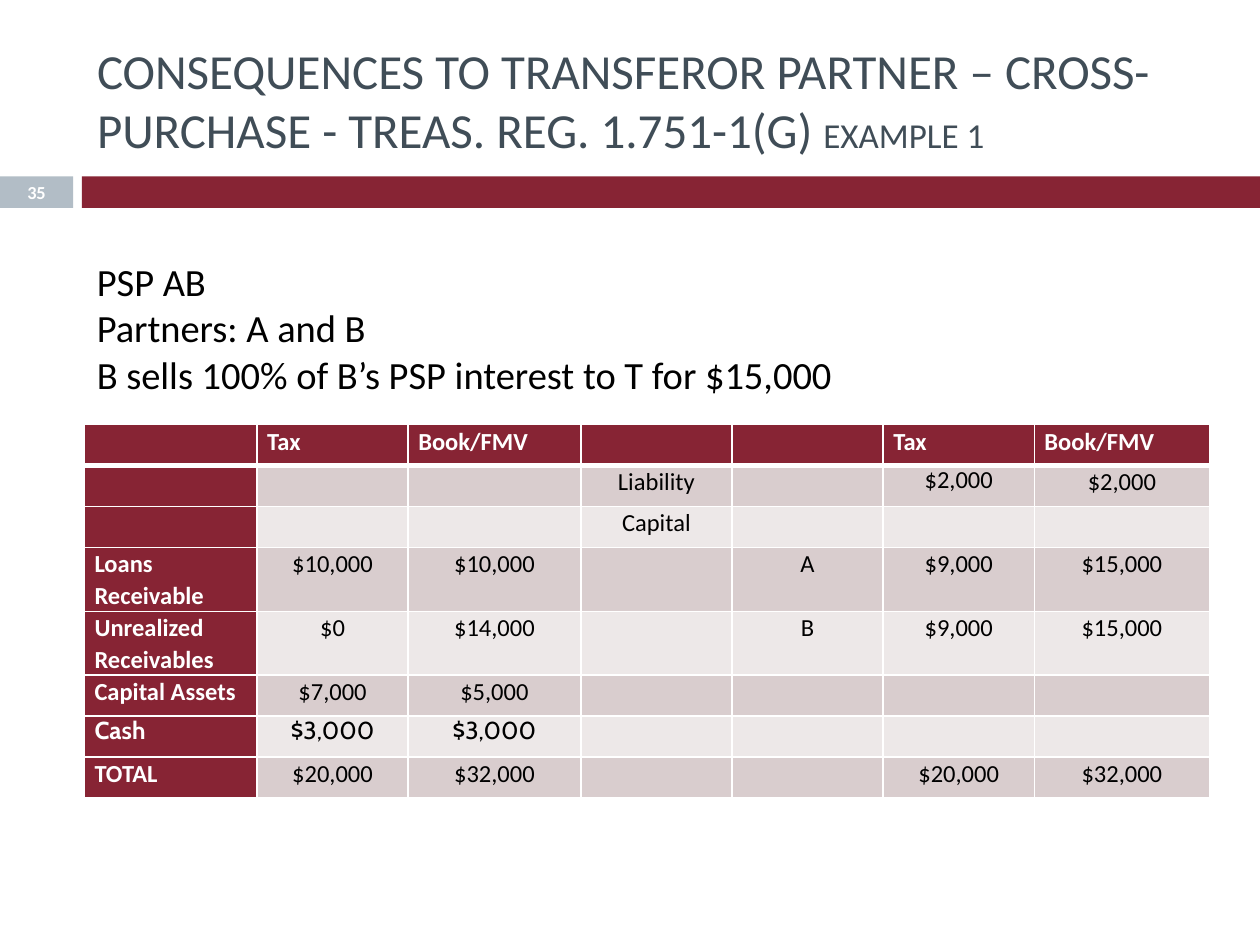
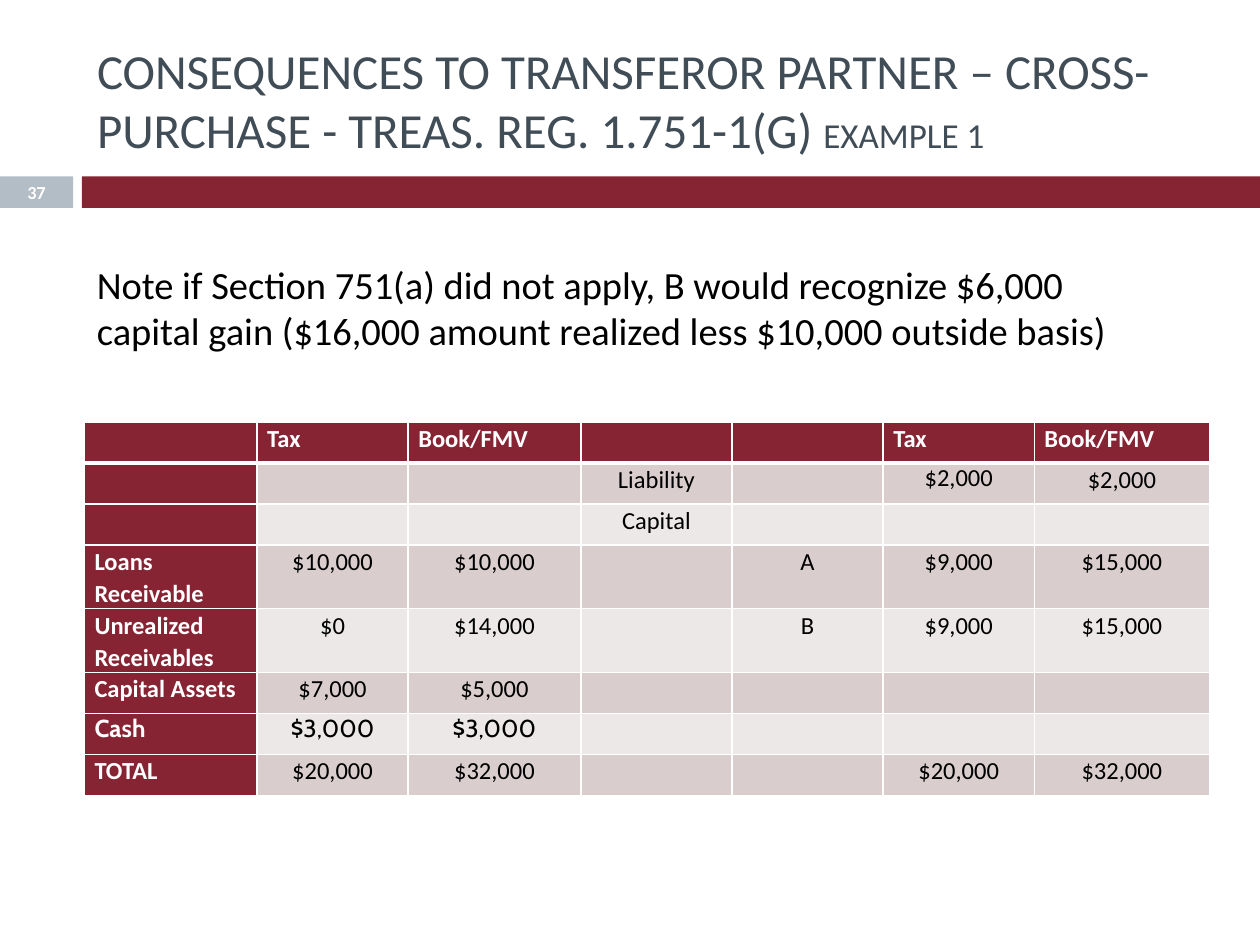
from lxml import etree
from pptx import Presentation
from pptx import util as u
from pptx.dml.color import RGBColor
from pptx.enum import shapes, text
from pptx.oxml.ns import qn

MAROON = RGBColor(0x87, 0x24, 0x34)
GREY = RGBColor(0xB2, 0xBD, 0xC6)
SLATE = RGBColor(0x40, 0x4D, 0x57)
ROSE = RGBColor(0xD9, 0xCD, 0xCE)
PALE = RGBColor(0xED, 0xE8, 0xE8)
WHITE = RGBColor(0xFF, 0xFF, 0xFF)
BLACK = RGBColor(0, 0, 0)

deck = Presentation()
deck.slide_width, deck.slide_height = u.Inches(10), u.Inches(7.5)
INCH = u.Inches(1)
MARGIN = 0.67
CONTENT_WIDTH = 8.92
BAND_TOP, BAND_HEIGHT = 1.4, 0.25
NUMBER_WIDTH, BAND_LEFT = 0.58, 0.65
ROW_HEIGHT = int(2.6 * INCH / 8)
COLUMN_WIDTHS = [1.37, 1.2, 1.37, 1.2, 1.2, 1.2, 1.39]

TITLE_RUNS = [
    ("CONSEQUENCES TO TRANSFEROR PARTNER – CROSS-PURCHASE - TREAS. REG. 1.751-1(G) ", 28),
    ("EXAMPLE 1", 20),
]
BALANCE_SHEET = [
    ["", "Tax", "Book/FMV", "", "", "Tax", "Book/FMV"],
    ["", "", "", "Liability", "", "$2,000", "$2,000"],
    ["", "", "", "Capital", "", "", ""],
    ["Loans Receivable", "$10,000", "$10,000", "", "A", "$9,000", "$15,000"],
    ["Unrealized Receivables", "$0", "$14,000", "", "B", "$9,000", "$15,000"],
    ["Capital Assets", "$7,000", "$5,000", "", "", "", ""],
    ["Cash", "$3,000", "$3,000", "", "", "", ""],
    ["TOTAL", "$20,000", "$32,000", "", "", "$20,000", "$32,000"],
]
CASH_ROW = 6
SINGLE_SPACED = {(1, 5)} | {(CASH_ROW, column) for column in range(3)}

PAGES = [
    {"number": "35", "facts_top": 2.0, "facts_width": 8.33, "sheet_top": 3.37,
     "facts": ["PSP AB", "Partners: A and B",
               "B sells 100% of B’s PSP interest to T for $15,000"]},
    {"number": "37", "facts_top": 2.02, "facts_width": 8.25, "sheet_top": 3.35,
     "facts": ["Note if Section 751(a) did not apply, B would recognize $6,000 "
               "capital gain ($16,000 amount realized less $10,000 outside basis)"]},
]


def add_run(paragraph, words, size, color, bold=False, name="Calibri"):
    run = paragraph.add_run()
    run.text = words
    run.font.color.rgb = color
    for key, value in {"size": u.Pt(size), "bold": bold, "name": name}.items():
        setattr(run.font, key, value)


def add_border(cell, side, points):
    line = etree.SubElement(cell._tc.get_or_add_tcPr(), qn(f"a:{side}"), w=str(u.Pt(points)))
    fill = etree.SubElement(line, qn("a:solidFill"))
    etree.SubElement(fill, qn("a:srgbClr"), val=str(WHITE))


for page in PAGES:
    slide = deck.slides.add_slide(deck.slide_layouts[5])

    for left, width, color in [(0, NUMBER_WIDTH, GREY), (BAND_LEFT, 10 - BAND_LEFT, MAROON)]:
        band = slide.shapes.add_shape(
            shapes.MSO_SHAPE.RECTANGLE,
            *map(u.Inches, (left, BAND_TOP, width, BAND_HEIGHT)))
        band.fill.solid()
        band.fill.fore_color.rgb = color
        band.line.fill.background()
        band.shadow.inherit = False

    heading = slide.shapes.title
    for key, value in {"left": MARGIN, "top": 0.25, "width": CONTENT_WIDTH, "height": 1.08}.items():
        setattr(heading, key, u.Inches(value))
    for key, value in {"word_wrap": True, "auto_size": text.MSO_AUTO_SIZE.NONE,
                       "vertical_anchor": text.MSO_ANCHOR.MIDDLE}.items():
        setattr(heading.text_frame, key, value)
    heading_line = heading.text_frame.paragraphs[0]
    heading_line.alignment = text.PP_ALIGN.LEFT
    for words, size in TITLE_RUNS:
        add_run(heading_line, words, size, SLATE)

    sheet = slide.shapes.add_table(
        len(BALANCE_SHEET), len(COLUMN_WIDTHS), u.Inches(MARGIN), u.Inches(page["sheet_top"]),
        u.Inches(CONTENT_WIDTH), ROW_HEIGHT * len(BALANCE_SHEET)).table
    for column, width in zip(sheet.columns, COLUMN_WIDTHS):
        column.width = u.Inches(width)
    for r, entries in enumerate(BALANCE_SHEET):
        sheet.rows[r].height = ROW_HEIGHT
        for c, entry in enumerate(entries):
            cell = sheet.cell(r, c)
            label = r == 0 or c == 0
            for key, value in {"margin_left": 0.08, "margin_right": 0.08,
                               "margin_top": 0, "margin_bottom": 0}.items():
                setattr(cell, key, u.Inches(value))
            for side in ("lnL", "lnR", "lnT", "lnB"):
                heavy = (r, side) in {(0, "lnB"), (1, "lnT")}
                add_border(cell, side, 3 if heavy else 1)
            cell.fill.solid()
            cell.fill.fore_color.rgb = MAROON if label else ROSE if r % 2 else PALE
            if not entry:
                continue
            amount = cell.text_frame.paragraphs[0]
            amount.alignment = text.PP_ALIGN.LEFT if label else text.PP_ALIGN.CENTER
            if (r, c) not in SINGLE_SPACED:
                amount.line_spacing = 1.07
                amount.space_after = u.Pt(8)
            add_run(amount, entry, 14, WHITE if label else BLACK, label,
                    "Cabin" if r == CASH_ROW else "Calibri")

    number = slide.shapes.add_textbox(*map(u.Inches, (0, 1.39, NUMBER_WIDTH, 0.27))).text_frame
    number.word_wrap = True
    number.vertical_anchor = text.MSO_ANCHOR.MIDDLE
    number.paragraphs[0].alignment = text.PP_ALIGN.CENTER
    add_run(number.paragraphs[0], page["number"], 10.5, WHITE, True)

    facts = slide.shapes.add_textbox(
        *map(u.Inches, (MARGIN, page["facts_top"], page["facts_width"], 1.21))).text_frame
    facts.word_wrap = True
    for i, fact in enumerate(page["facts"]):
        add_run(facts.add_paragraph() if i else facts.paragraphs[0], fact, 22, BLACK)

deck.save("out.pptx")
